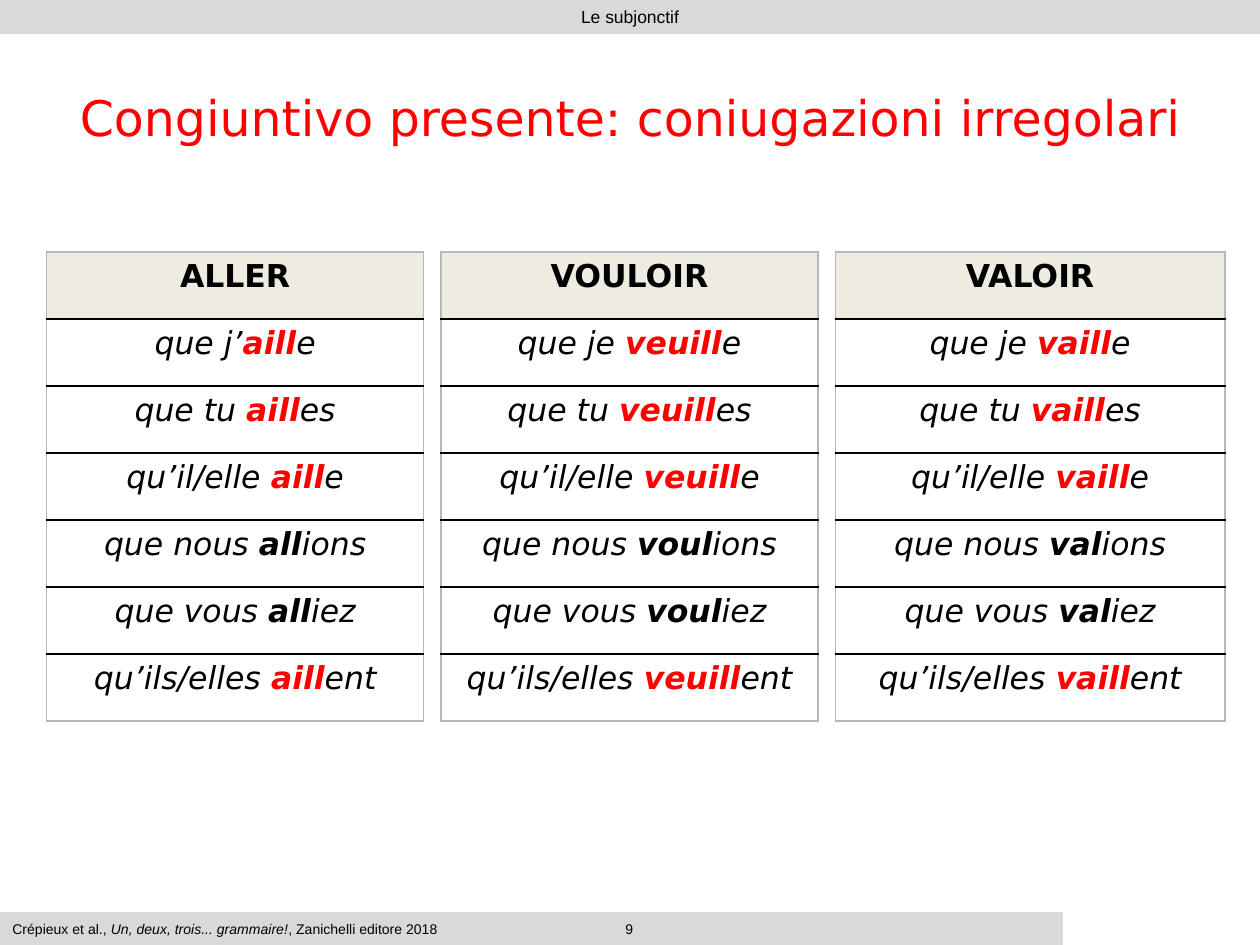
from dataclasses import dataclass

from lxml import etree
from pptx import Presentation
from pptx.dml.color import RGBColor
from pptx.enum.shapes import MSO_SHAPE
from pptx.enum.text import MSO_ANCHOR, PP_ALIGN
from pptx.oxml.ns import qn
from pptx.util import Cm, Pt

RECTANGLE = MSO_SHAPE.RECTANGLE
TOP, MIDDLE = MSO_ANCHOR.TOP, MSO_ANCHOR.MIDDLE
LEFT, CENTER = PP_ALIGN.LEFT, PP_ALIGN.CENTER


@dataclass(frozen=True)
class Theme:
    text: str = "000000"
    accent: str = "FF0000"
    bar: str = "D9D9D9"
    header: str = "EEECE1"
    frame: str = "B7B7B7"
    bar_font: str = "Arial"
    body_font: str = "DejaVu Sans"
    title_size: int = 28
    table_size: int = 18
    top_size: int = 10
    footer_size: int = 8


THEME = Theme()

SLIDE_WIDTH, SLIDE_HEIGHT = 25.4, 19.05
TABLE_LEFT, TABLE_TOP, TABLE_GAP, ROW_HEIGHT = 0.94, 5.08, 0.35, 1.35

ENDINGS = ["e", "es", "e", "ions", "iez", "ent"]
PLURAL_ROWS = (3, 4)
VERBS = [
    ("ALLER", "que j’", "aill", "all", 7.6),
    ("VOULOIR", "que je ", "veuill", "voul", 7.6),
    ("VALOIR", "que je ", "vaill", "val", 7.85),
]
PRONOUNS = ["que tu ", "qu’il/elle ", "que nous ", "que vous ", "qu’ils/elles "]


def write_text(frame, runs, size, font=THEME.body_font, color=THEME.text,
               align=CENTER, anchor=TOP, bold=False, italic=False):
    frame.word_wrap = True
    frame.vertical_anchor = anchor
    paragraph = frame.paragraphs[0]
    paragraph.alignment = align
    for text, changes in runs:
        run = paragraph.add_run()
        run.text = text
        run.font.name = font
        run.font.size = Pt(size)
        run.font.bold = changes.get("bold", bold)
        run.font.italic = changes.get("italic", italic)
        run.font.color.rgb = RGBColor.from_string(changes.get("color", color))


def add_bar(slide, box, runs, **text_format):
    bar = slide.shapes.add_shape(RECTANGLE, *map(Cm, box))
    bar.shadow.inherit = False
    bar.fill.solid()
    bar.fill.fore_color.rgb = RGBColor.from_string(THEME.bar)
    bar.line.fill.background()
    write_text(bar.text_frame, runs, font=THEME.bar_font, **text_format)


def add_title(slide, box, text):
    title = slide.shapes.add_textbox(*map(Cm, box))
    write_text(title.text_frame, [(text, {})], size=THEME.title_size,
               color=THEME.accent, anchor=MIDDLE)


def add_footer(slide, box):
    left, top, width, height = box
    citation = [
        ("Crépieux et al., ", {}),
        ("Un, deux, trois... grammaire!", {"italic": True}),
        (", Zanichelli editore 2018", {}),
    ]
    add_bar(slide, box, citation, size=THEME.footer_size, align=LEFT, anchor=MIDDLE)
    add_bar(slide, (left + 9.8, top, 5.77, height), [("9", {})],
            size=THEME.footer_size, anchor=MIDDLE)


def set_borders(cell, colors):
    properties = cell._tc.get_or_add_tcPr()
    for side, color in colors.items():
        line = etree.SubElement(properties, qn(f"a:{side}"), w=str(Pt(1)))
        fill = etree.SubElement(line, qn("a:solidFill"))
        etree.SubElement(fill, qn("a:srgbClr"), val=color)


def conjugate(first_person, irregular_stem, regular_stem):
    for index, (pronoun, ending) in enumerate(zip([first_person, *PRONOUNS], ENDINGS)):
        if index in PLURAL_ROWS:
            stem = (regular_stem, {"bold": True})
        else:
            stem = (irregular_stem, {"bold": True, "color": THEME.accent})
        yield [(pronoun, {}), stem, (ending, {})]


def add_verb_table(slide, box, infinitive, forms):
    rows = [[(infinitive, {})], *forms]
    table = slide.shapes.add_table(len(rows), 1, *map(Cm, box)).table
    table.first_row = False
    table.horz_banding = False
    last = len(rows) - 1
    for index, runs in enumerate(rows):
        is_header = index == 0
        cell = table.cell(index, 0)
        set_borders(cell, {
            "lnL": THEME.frame,
            "lnR": THEME.frame,
            "lnT": THEME.frame if is_header else THEME.text,
            "lnB": THEME.frame if index == last else THEME.text,
        })
        if is_header:
            cell.fill.solid()
            cell.fill.fore_color.rgb = RGBColor.from_string(THEME.header)
        else:
            cell.fill.background()
        write_text(cell.text_frame, runs, size=THEME.table_size,
                   bold=is_header, italic=not is_header)


def add_verb_tables(slide, left, top):
    height = ROW_HEIGHT * (len(ENDINGS) + 1)
    for infinitive, first_person, irregular_stem, regular_stem, width in VERBS:
        forms = conjugate(first_person, irregular_stem, regular_stem)
        add_verb_table(slide, (left, top, width, height), infinitive, forms)
        left += width + TABLE_GAP


def main():
    presentation = Presentation()
    presentation.slide_width = Cm(SLIDE_WIDTH)
    presentation.slide_height = Cm(SLIDE_HEIGHT)
    slide = presentation.slides.add_slide(presentation.slide_layouts[6])
    add_bar(slide, (0, 0, SLIDE_WIDTH, 0.69), [("Le subjonctif", {})],
            size=THEME.top_size)
    add_title(slide, (1.27, 0.76, 22.86, 3.18),
              "Congiuntivo presente: coniugazioni irregolari")
    add_footer(slide, (0, 18.39, 21.43, 0.66))
    add_verb_tables(slide, TABLE_LEFT, TABLE_TOP)
    presentation.save("out.pptx")


if __name__ == "__main__":
    main()
